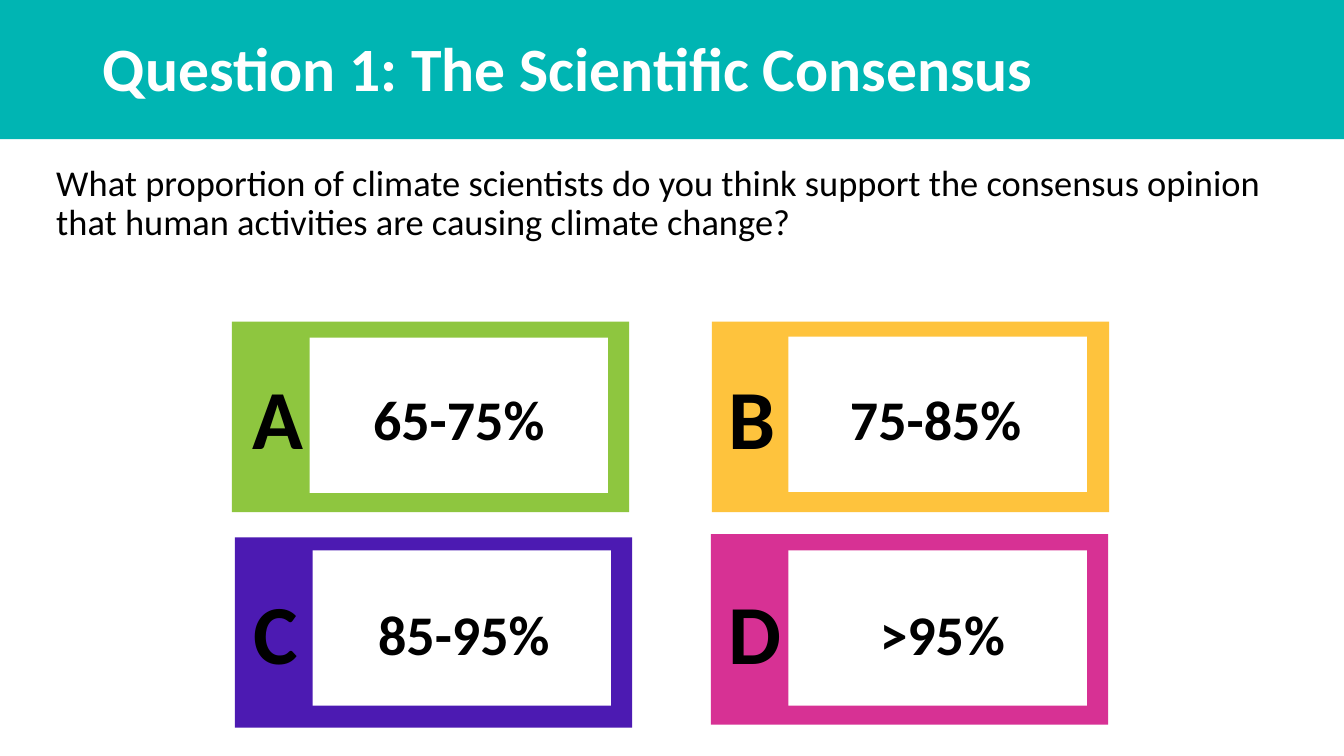
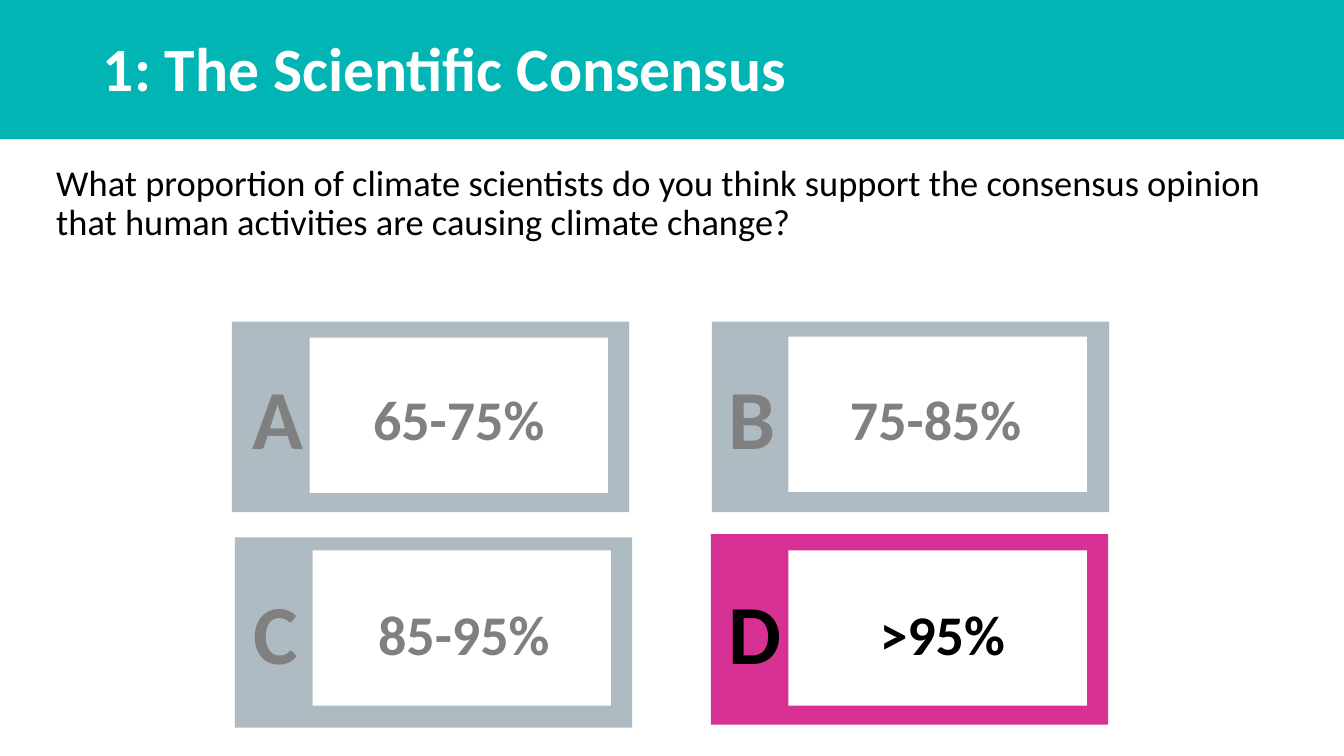
"""Builds a quiz question slide and its answer slide with python-pptx."""
from dataclasses import dataclass

import pptx
import pptx.dml.color
import pptx.enum.shapes
import pptx.enum.text
import pptx.presentation
import pptx.shapes.autoshape
import pptx.slide
import pptx.text.text
import pptx.util

Inches = pptx.util.Inches
Align = pptx.enum.text.PP_ALIGN
Anchor = pptx.enum.text.MSO_ANCHOR


@dataclass(frozen=True)
class Theme:
    """Colours, font and type sizes shared by the slides."""

    font: str = "Calibri"
    band: str = "00B5B3"
    white: str = "FFFFFF"
    ink: str = "000000"
    muted_fill: str = "AFBBC3"
    muted_ink: str = "808080"
    title_size: int = 44
    question_size: int = 26
    letter_size: int = 60
    value_size: int = 40
    line_spacing: float = 0.9


@dataclass(frozen=True)
class Box:
    """A rectangle in inches."""

    left: float
    top: float
    width: float
    height: float


@dataclass(frozen=True)
class Answer:
    """An answer card: its text, colour, and frame, panel and value places."""

    letter: str
    value: str
    color: str
    frame: tuple[float, float]
    panel: tuple[float, float]
    value_left: float
    value_width: float


@dataclass(frozen=True)
class QuizSlide:
    """A title and the letters of the answers shown in full colour."""

    title: str
    active: str


THEME = Theme()
SLIDE_WIDTH, SLIDE_HEIGHT = 13.33, 7.5
BAND = Box(0, 0, SLIDE_WIDTH, 1.38)
TITLE = Box(0.92, 0.22, 11.5, 0.97)
QUESTION_BOX = Box(0.46, 1.59, 12.5, 1.27)
FRAME_SIZE = (3.94, 1.89)
PANEL_SIZE = (2.96, 1.54)
LETTER_SIZE = (0.66, 0.64)
COLUMN_STEP, ROW_STEP = 4.72, 2.13
LETTER_LEFT, LETTER_TOP = 2.41, 3.81
VALUE_TOP, VALUE_HEIGHT = 3.77, 0.77

QUESTION = (
    "What proportion of climate scientists do you think support the consensus "
    "opinion that human activities are causing climate change?"
)
ANSWERS = (
    Answer("A", "65-75%", "8EC63F", (2.3, 3.19), (3.07, 3.35), 3.07, 2.96),
    Answer("B", "75-85%", "FEC33D", (7.06, 3.19), (7.82, 3.34), 7.8, 2.96),
    Answer("C", "85-95%", "4C1AB2", (2.33, 5.33), (3.1, 5.46), 3.04, 3.12),
    Answer("D", ">95%", "D73194", (7.05, 5.3), (7.82, 5.46), 7.77, 3.15),
)
SLIDES = (
    QuizSlide("Question 1: The Scientific Consensus", "ABCD"),
    QuizSlide("1: The Scientific Consensus", "D"),
)


def lengths(box: Box) -> tuple[pptx.util.Length, ...]:
    """Return the left, top, width and height of a box as lengths."""
    return tuple(Inches(v) for v in (box.left, box.top, box.width, box.height))


def add_block(slide: pptx.slide.Slide, box: Box, color: str) -> pptx.shapes.autoshape.Shape:
    """Draw a plain filled rectangle."""
    block = slide.shapes.add_shape(pptx.enum.shapes.MSO_SHAPE.RECTANGLE, *lengths(box))
    block.shadow.inherit = False
    block.fill.solid()
    block.fill.fore_color.rgb = pptx.dml.color.RGBColor.from_string(color)
    block.line.fill.background()
    return block


def write(
    frame: pptx.text.text.TextFrame,
    text: str,
    size: int,
    color: str,
    bold: bool = True,
    align: Align = Align.CENTER,
    anchor: Anchor = Anchor.TOP,
    spacing: float = 1.0,
) -> None:
    """Write one formatted run into a text frame."""
    frame.word_wrap = True
    frame.auto_size = pptx.enum.text.MSO_AUTO_SIZE.NONE
    frame.vertical_anchor = anchor
    paragraph = frame.paragraphs[0]
    paragraph.alignment = align
    paragraph.line_spacing = spacing
    run = paragraph.add_run()
    run.text = text
    run.font.name = THEME.font
    run.font.size = pptx.util.Pt(size)
    run.font.bold = bold
    run.font.color.rgb = pptx.dml.color.RGBColor.from_string(color)


def add_title(slide: pptx.slide.Slide, text: str) -> None:
    """Place and format the title placeholder."""
    title = slide.shapes.title
    title.left, title.top, title.width, title.height = lengths(TITLE)
    write(title.text_frame, text, THEME.title_size, THEME.white,
          align=Align.LEFT, anchor=Anchor.MIDDLE, spacing=THEME.line_spacing)


def add_question(slide: pptx.slide.Slide) -> None:
    """Add the question under the title band."""
    question = slide.shapes.add_textbox(*lengths(QUESTION_BOX))
    write(question.text_frame, QUESTION, THEME.question_size, THEME.ink,
          bold=False, align=Align.LEFT, spacing=THEME.line_spacing)


def add_answer(slide: pptx.slide.Slide, index: int, answer: Answer, active: bool) -> None:
    """Draw one answer card, greyed out unless active."""
    row, column = divmod(index, 2)
    fill = answer.color if active else THEME.muted_fill
    ink = THEME.ink if active else THEME.muted_ink
    add_block(slide, Box(*answer.frame, *FRAME_SIZE), fill)
    add_block(slide, Box(*answer.panel, *PANEL_SIZE), THEME.white)
    letter_box = Box(LETTER_LEFT + column * COLUMN_STEP, LETTER_TOP + row * ROW_STEP, *LETTER_SIZE)
    letter = slide.shapes.add_textbox(*lengths(letter_box))
    write(letter.text_frame, answer.letter, THEME.letter_size, ink, anchor=Anchor.MIDDLE)
    value_box = Box(answer.value_left, VALUE_TOP + row * ROW_STEP, answer.value_width, VALUE_HEIGHT)
    value = slide.shapes.add_textbox(*lengths(value_box))
    write(value.text_frame, answer.value, THEME.value_size, ink)


def add_layout_band(slide: pptx.slide.Slide) -> None:
    """Put the title band at the back of the layout that the slides share."""
    band = add_block(slide, BAND, THEME.band)
    layout_tree = slide.slide_layout.shapes.element
    band.element.nvSpPr.cNvPr.id = 20
    layout_tree.insert(2, band.element)


def main() -> None:
    """Build and save the presentation."""
    deck = pptx.Presentation()
    deck.slide_width, deck.slide_height = Inches(SLIDE_WIDTH), Inches(SLIDE_HEIGHT)
    title_only = deck.slide_layouts[5]
    for number, quiz in enumerate(SLIDES):
        slide = deck.slides.add_slide(title_only)
        if number == 0:
            add_layout_band(slide)
        add_title(slide, quiz.title)
        add_question(slide)
        for index, answer in enumerate(ANSWERS):
            add_answer(slide, index, answer, answer.letter in quiz.active)
    deck.save("out.pptx")


if __name__ == "__main__":
    main()
